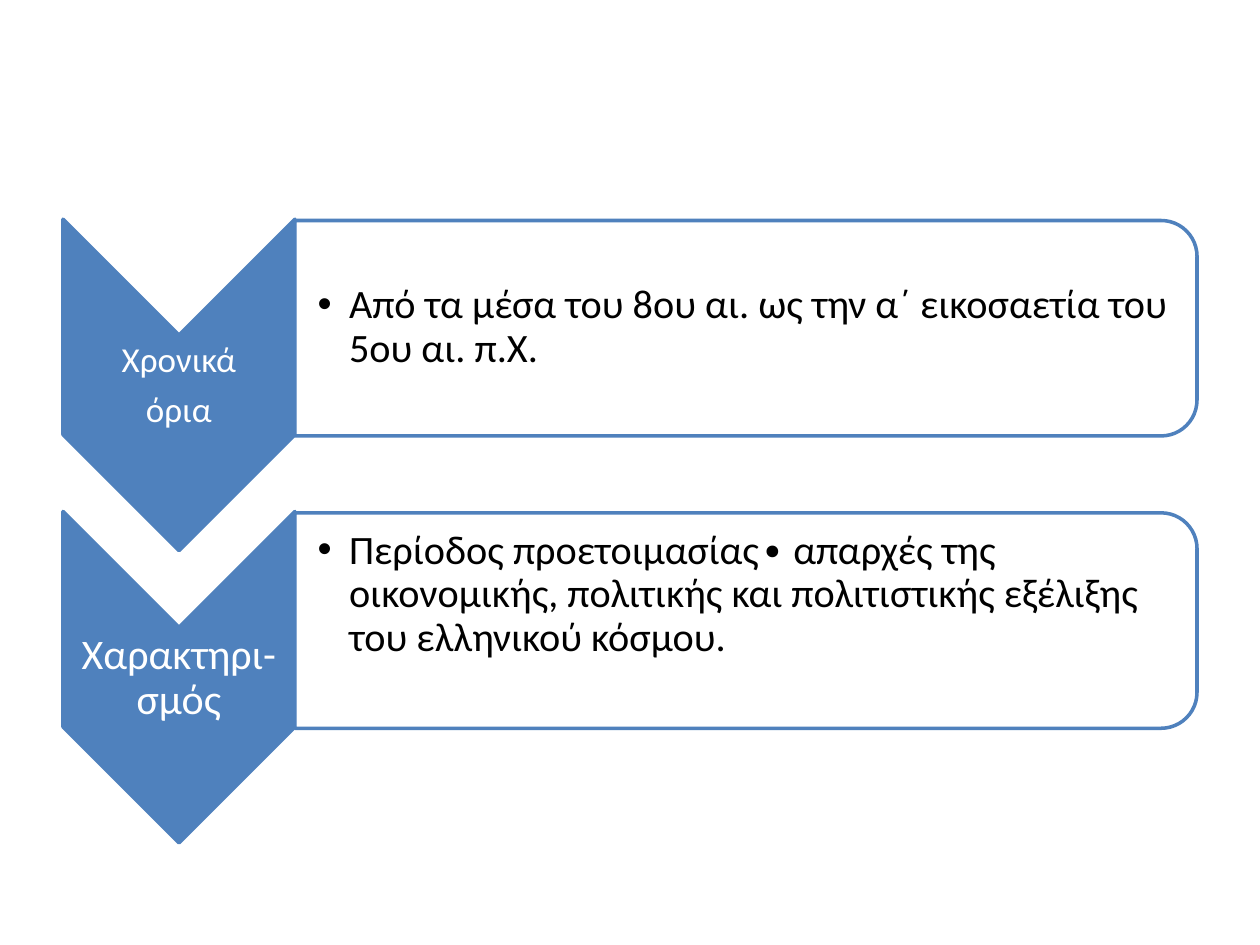
from pptx import Presentation
from pptx import util as u
from pptx.dml.color import RGBColor
from pptx.enum import shapes, text
from lxml import etree

BLUE = RGBColor(0x4F, 0x81, 0xBD)
WHITE = RGBColor(0xFF, 0xFF, 0xFF)
BLACK = RGBColor(0, 0, 0)
NS = "{http://schemas.openxmlformats.org/drawingml/2006/main}"
ROWS = [
    (["Χρονικά", "όρια"], 20, 0.01,
     "Από τα μέσα του 8ου αι. ως την α΄ εικοσαετία του 5ου αι. π.Χ.", 0.02),
    (["Χαρακτηρι-σμός"], 24, 0.02,
     "Περίοδος προετοιμασίας∙ απαρχές της οικονομικής, πολιτικής και "
     "πολιτιστικής εξέλιξης του ελληνικού κόσμου.", 0.42),
]
TOP, STEP = 1.74, 2.32


def add_turned(slide, kind, left, top, wide, high, fill):
    x = left + (wide - high) / 2
    y = top + (high - wide) / 2
    shape = slide.shapes.add_shape(
        kind, u.Inches(x), u.Inches(y), u.Inches(high), u.Inches(wide))
    shape.rotation = 90
    shape.shadow.inherit = False
    shape.fill.solid()
    shape.fill.fore_color.rgb = fill
    shape.line.color.rgb = BLUE
    shape.line.width = u.Pt(2)
    return shape


def add_panel(slide, top):
    panel = add_turned(slide, shapes.MSO_SHAPE.ROUND_2_SAME_RECTANGLE,
                       2.34, top, 7.16, 1.71, WHITE)
    color = panel.fill._xPr.find(f"{NS}solidFill/{NS}srgbClr")
    etree.SubElement(color, f"{NS}alpha", val="90000")


def set_frame(frame, left, right, top, bottom):
    frame.word_wrap = True
    frame.auto_size = text.MSO_AUTO_SIZE.NONE
    frame.vertical_anchor = text.MSO_ANCHOR.MIDDLE
    frame.margin_left, frame.margin_right = u.Inches(left), u.Inches(right)
    frame.margin_top, frame.margin_bottom = u.Inches(top), u.Inches(bottom)


def set_para(para, size, color, after):
    para.line_spacing = 0.9
    para.space_before = u.Pt(0)
    para.space_after = u.Pt(size * after)
    para.font.name = "Calibri"
    para.font.size = u.Pt(size)
    para.font.color.rgb = color


def add_label(slide, lines, size, inset, top):
    box = slide.shapes.add_textbox(
        u.Inches(0.5), u.Inches(top), u.Inches(1.84), u.Inches(0.79))
    frame = box.text_frame
    set_frame(frame, inset, inset, inset, inset)
    frame.text = "\n".join(lines)
    for para in frame.paragraphs:
        para.alignment = text.PP_ALIGN.CENTER
        set_para(para, size, WHITE, 0.35)


def fill_body(slide, body, words, top, bottom):
    body.left, body.top = u.Inches(2.34), u.Inches(top)
    body.width, body.height = u.Inches(7.08), u.Inches(1.54)
    frame = body.text_frame
    set_frame(frame, 0.18, 0.02, 0.02, bottom)
    frame.text = words
    para = frame.paragraphs[0]
    set_para(para, 23, BLACK, 0.15)
    props = para._p.get_or_add_pPr()
    props.set("marL", str(u.Inches(0.25)))
    props.set("indent", str(-u.Inches(0.25)))
    slide.shapes._spTree.append(body._element)


def main():
    deck = Presentation()
    deck.slide_width, deck.slide_height = u.Inches(10), u.Inches(7.5)
    slide = deck.slides.add_slide(deck.slide_layouts[3])
    title, *bodies = slide.placeholders
    title._element.getparent().remove(title._element)
    for row, (body, data) in enumerate(zip(bodies, ROWS)):
        label, size, inset, words, bottom = data
        top = TOP + row * STEP
        add_turned(slide, shapes.MSO_SHAPE.CHEVRON, 0.5, top, 1.84, 2.63, BLUE)
        add_label(slide, label, size, inset, top + 0.93)
        add_panel(slide, top + 0.01)
        fill_body(slide, body, words, top + 0.09, bottom)
    deck.save("out.pptx")


if __name__ == "__main__":
    main()
